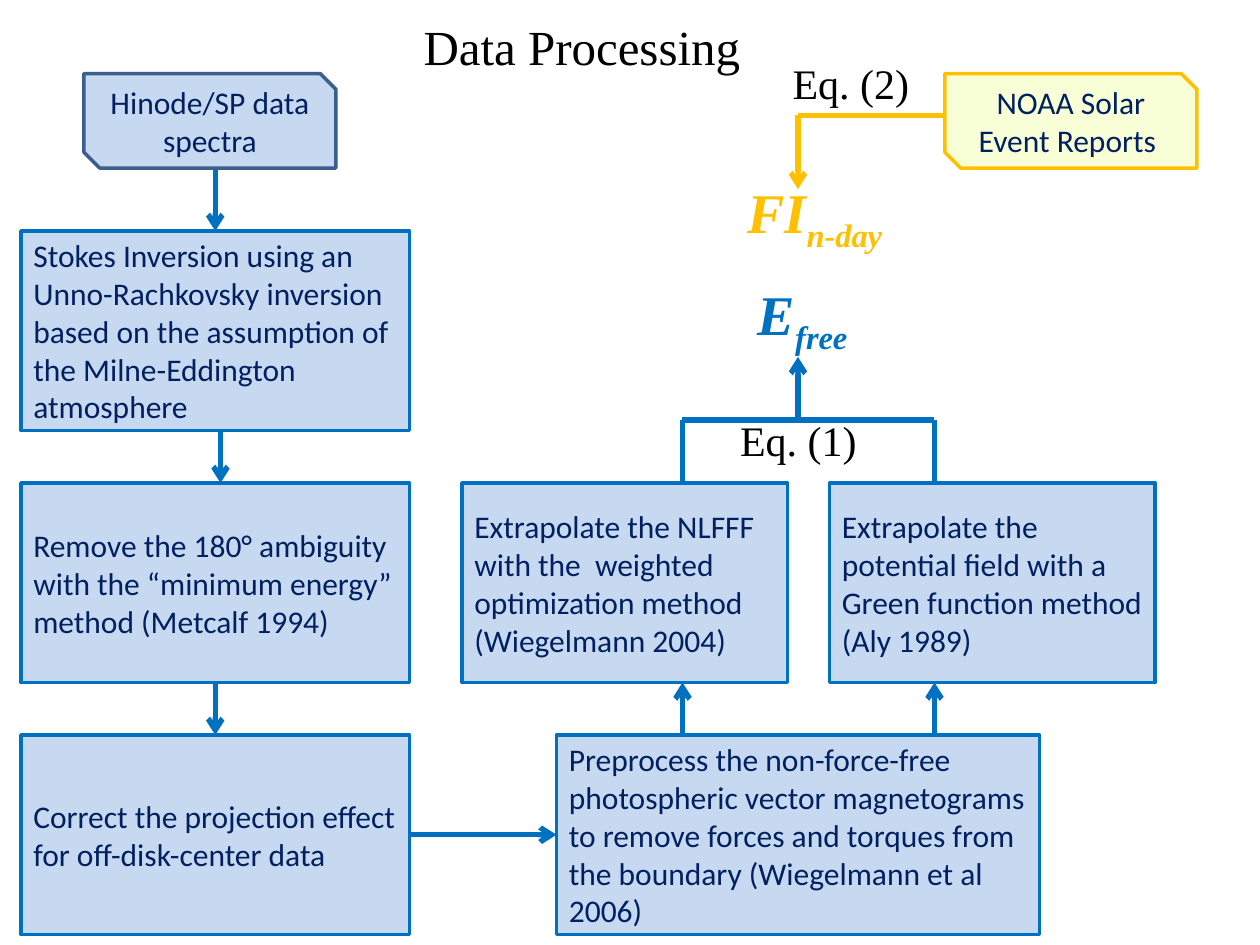
from dataclasses import dataclass

from lxml import etree
from pptx import Presentation
from pptx.dml.color import RGBColor
from pptx.enum.shapes import MSO_CONNECTOR, MSO_SHAPE
from pptx.enum.text import MSO_ANCHOR, PP_ALIGN
from pptx.oxml.ns import qn
from pptx.util import Inches, Pt

RECTANGLE = MSO_SHAPE.RECTANGLE
SNIPPED = MSO_SHAPE.SNIP_2_DIAG_RECTANGLE
STRAIGHT = MSO_CONNECTOR.STRAIGHT
LEFT, CENTER = PP_ALIGN.LEFT, PP_ALIGN.CENTER
MIDDLE, TOP = MSO_ANCHOR.MIDDLE, MSO_ANCHOR.TOP

# The slide is a grid of 120 columns and 90 rows, twelve to the inch
COLUMNS, ROWS = 120, 90
SLIDE_WIDTH, SLIDE_HEIGHT = Inches(10), Inches(7.5)


@dataclass(frozen=True)
class Theme:
    blue: str = "0070C0"
    pale_blue: str = "C6D9F1"
    steel: str = "3A5F8C"
    gold: str = "FFC000"
    pale_yellow: str = "F8FED6"
    navy: str = "002060"
    black: str = "000000"
    body_font: str = "Calibri"
    formula_font: str = "Times New Roman"
    body_size: int = 18
    equation_size: int = 24
    title_size: int = 28
    symbol_size: int = 32
    outline: int = 2
    connector: int = 3


THEME = Theme()


@dataclass(frozen=True)
class Box:
    text: str
    column: float
    row: float
    width: float
    height: float = 19
    preset: int = RECTANGLE
    fill: str = THEME.pale_blue
    line: str = THEME.blue
    align: int = LEFT


@dataclass(frozen=True)
class Link:
    start: tuple[float, float]
    end: tuple[float, float]
    arrow: bool = True
    color: str = THEME.blue


@dataclass(frozen=True)
class Label:
    text: str
    column: float
    row: float
    width: float
    height: float
    size: int
    color: str = THEME.black
    subscript: str = ""
    align: int = LEFT
    inset: float = 0.1
    wrap: bool = True


# Source data, and the processing steps in the left column and beside it
BOXES = [
    Box("NOAA Solar Event Reports ", 90, 7, 24, 9, SNIPPED,
        THEME.pale_yellow, THEME.gold, CENTER),
    Box("Hinode/SP data spectra", 8, 7, 24, 9, SNIPPED,
        line=THEME.steel, align=CENTER),
    Box("Stokes Inversion using an\nUnno-Rachkovsky inversion based on the "
        "assumption of the Milne-Eddington atmosphere", 2, 22, 37),
    Box("Remove the 180° ambiguity with the “minimum energy” method "
        "(Metcalf 1994)", 2, 46, 37),
    Box("Correct the projection effect for off-disk-center data", 2, 70, 37),
    Box("Preprocess the non-force-free photospheric vector magnetograms to "
        "remove forces and torques from the boundary (Wiegelmann et al 2006)",
        53, 70, 46),
    Box("Extrapolate the NLFFF with the  weighted optimization method "
        "(Wiegelmann 2004)", 44, 46, 31),
    Box("Extrapolate the potential field with a Green function method "
        "(Aly 1989)", 79, 46, 31),
]

BRANCHES = (65, 89)
BRACKET_ROW = 40
RESULT_COLUMN = 76

LINKS = [
    # Down the left column, then across
    Link((20.5, 16), (20.5, 22)),
    Link((21, 41), (21, 46)),
    Link((20.5, 65), (20.5, 70)),
    Link((39, 79.5), (53, 79.5)),
    # Up both branches to the bracket and the free energy
    *(Link((column, 70), (column, 65)) for column in BRANCHES),
    *(Link((column, 46), (column, BRACKET_ROW), False) for column in BRANCHES),
    Link((BRANCHES[1], BRACKET_ROW), (BRANCHES[0], BRACKET_ROW), False),
    Link((RESULT_COLUMN, BRACKET_ROW), (RESULT_COLUMN, 34)),
    # From the event reports to the flare index
    Link((RESULT_COLUMN, 11), (90, 11), False, THEME.gold),
    Link((RESULT_COLUMN, 11), (RESULT_COLUMN, 18), True, THEME.gold),
]

LABELS = [
    Label("Eq. (1)", 70, 39, 15, 6, THEME.equation_size, inset=0.04),
    Label("Eq. (2)", 75, 5, 15, 6, THEME.equation_size, inset=0.04),
    Label("E", 71, 26, 12, 7.7, THEME.symbol_size, THEME.blue, "free",
          wrap=False),
    Label("FI", 70, 16.3, 16.4, 7.7, THEME.symbol_size, THEME.gold, "n-day",
          wrap=False),
    Label("Data Processing ", 2, 1, 108, 9.4, THEME.title_size, align=CENTER),
]


def across(columns: float) -> int:
    return round(SLIDE_WIDTH * columns / COLUMNS)


def down(rows: float) -> int:
    return round(SLIDE_HEIGHT * rows / ROWS)


def frame(item: Box | Label) -> tuple[int, int, int, int]:
    return (across(item.column), down(item.row),
            across(item.width), down(item.height))


def style_text(text_frame, font_name: str, size: int, color: str,
               align: int) -> None:
    for paragraph in text_frame.paragraphs:
        paragraph.alignment = align
        for run in paragraph.runs:
            run.font.name = font_name
            run.font.size = Pt(size)
            run.font.color.rgb = RGBColor.from_string(color)


def draw_box(slide, box: Box) -> None:
    shape = slide.shapes.add_shape(box.preset, *frame(box))
    shape.shadow.inherit = False
    shape.fill.solid()
    shape.fill.fore_color.rgb = RGBColor.from_string(box.fill)
    shape.line.color.rgb = RGBColor.from_string(box.line)
    shape.line.width = Pt(THEME.outline)
    text_frame = shape.text_frame
    text_frame.text = box.text
    text_frame.word_wrap = True
    text_frame.vertical_anchor = MIDDLE
    style_text(text_frame, THEME.body_font, THEME.body_size, THEME.navy,
               box.align)


def draw_link(slide, link: Link) -> None:
    (start_column, start_row), (end_column, end_row) = link.start, link.end
    connector = slide.shapes.add_connector(
        STRAIGHT, across(start_column), down(start_row),
        across(end_column), down(end_row))
    connector.line.color.rgb = RGBColor.from_string(link.color)
    connector.line.width = Pt(THEME.connector)
    if link.arrow:
        outline = connector.line._get_or_add_ln()
        etree.SubElement(outline, qn("a:tailEnd"), type="arrow")
    etree.SubElement(connector._element.spPr, qn("a:effectLst"))


def draw_label(slide, label: Label) -> None:
    text_frame = slide.shapes.add_textbox(*frame(label)).text_frame
    text_frame.text = label.text
    text_frame.word_wrap = label.wrap
    text_frame.vertical_anchor = TOP
    if label.inset < 0.1:
        text_frame.margin_left = text_frame.margin_right = Inches(label.inset)
        text_frame.margin_top = text_frame.margin_bottom = Inches(label.inset)
    if label.subscript:
        paragraph = text_frame.paragraphs[0]
        subscript = paragraph.add_run()
        subscript.text = label.subscript
        subscript._r.get_or_add_rPr().set("baseline", "-25000")
        for run in paragraph.runs:
            run.font.bold = run.font.italic = True
    style_text(text_frame, THEME.formula_font, label.size, label.color,
               label.align)


def main() -> None:
    presentation = Presentation()
    presentation.slide_width = SLIDE_WIDTH
    presentation.slide_height = SLIDE_HEIGHT
    slide = presentation.slides.add_slide(presentation.slide_layouts[6])
    for draw, items in ((draw_link, LINKS), (draw_box, BOXES),
                        (draw_label, LABELS)):
        for item in items:
            draw(slide, item)
    presentation.save("out.pptx")


if __name__ == "__main__":
    main()
